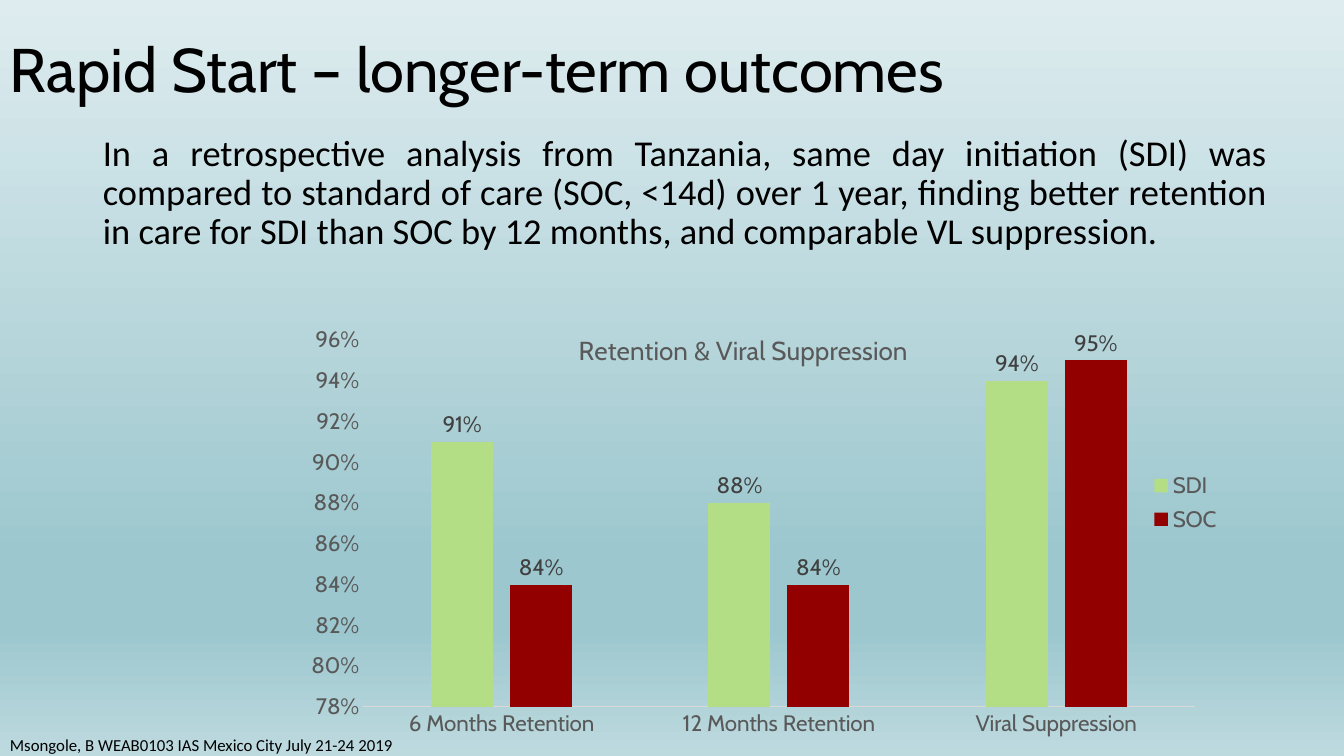
import pptx
import pptx.chart.data
import pptx.dml.color
import pptx.enum.chart
import pptx.enum.text
import pptx.oxml
import pptx.oxml.ns
import pptx.util

SCALE = 914400 / 100.8
SLIDE_W, SLIDE_H = 1344, 756


class Theme:
    heading_font, body_font = "Cabin", "Calibri"
    title, body, chart_title, chart, source = 44, 26, 18.6, 16, 12
    text, chart_text, label, axis = "000000", "595959", "404040", "D9D9D9"
    series = ("B4DE86", "920000")
    background = ((0, "DEECEF"), (74, "9CC7CE"), (83, "9CC7CE"), (100, "BDDADF"))


def px(n):
    return pptx.util.Emu(round(n * SCALE))


def rgb(color):
    return pptx.dml.color.RGBColor.from_string(color)


def set_font(font, size, color, name):
    font.size, font.name, font.bold = pptx.util.Pt(size), name, False
    font.color.rgb = rgb(color)


def add_background(slide):
    fill = slide.background.fill
    fill.gradient()
    fill.gradient_angle = 270
    stops = slide.element.find(".//" + pptx.oxml.ns.qn("a:gsLst"))
    for gs in list(stops):
        stops.remove(gs)
    for position, color in Theme.background:
        stops.append(pptx.oxml.parse_xml(
            f'<a:gs {pptx.oxml.ns.nsdecls("a")} pos="{position * 1000}">'
            f'<a:srgbClr val="{color}"/></a:gs>'))


def add_text(slide, box, text, size, name, wrap=True, line_spacing=None,
             align=pptx.enum.text.PP_ALIGN.LEFT,
             anchor=pptx.enum.text.MSO_ANCHOR.TOP):
    tf = slide.shapes.add_textbox(*map(px, box)).text_frame
    tf.word_wrap, tf.vertical_anchor = wrap, anchor
    p = tf.paragraphs[0]
    p.text = text
    p.alignment, p.line_spacing = align, line_spacing
    set_font(p.runs[0].font, size, Theme.text, name)


def place(chart, tag, box, frame, inner=False):
    """Lay out a chart part at a px box relative to the chart frame."""
    ns = pptx.oxml.ns
    element = chart.element.find(".//" + ns.qn(tag))
    for old in element.findall(ns.qn("c:layout")):
        element.remove(old)
    x, y, w, h = box
    values = {"x": x / frame[2], "y": y / frame[3]}
    if w:
        values.update(w=w / frame[2], h=h / frame[3])
    target = '<c:layoutTarget val="inner"/>' if inner else ""
    modes = '<c:xMode val="edge"/><c:yMode val="edge"/>'
    sizes = "".join(f'<c:{k} val="{v:.4f}"/>' for k, v in values.items())
    layout = pptx.oxml.parse_xml(
        f'<c:layout {ns.nsdecls("c")}><c:manualLayout>{target}{modes}{sizes}'
        '</c:manualLayout></c:layout>')
    overlay = element.find(ns.qn("c:overlay"))
    element.insert(0 if overlay is None else element.index(overlay), layout)


def format_axes(chart):
    none = pptx.enum.chart.XL_TICK_MARK.NONE
    for axis in (chart.category_axis, chart.value_axis):
        axis.major_tick_mark = axis.minor_tick_mark = none
        axis.has_major_gridlines = False
        set_font(axis.tick_labels.font, Theme.chart, Theme.chart_text, Theme.heading_font)
    line = chart.category_axis.format.line
    line.color.rgb, line.width = rgb(Theme.axis), pptx.util.Pt(0.75)

    axis = chart.value_axis
    axis.format.line.fill.background()
    axis.minimum_scale, axis.maximum_scale, axis.major_unit = 0.78, 0.96, 0.02
    axis.tick_labels.number_format = "0%"
    axis.tick_labels.number_format_is_linked = False


def format_series(plot):
    plot.gap_width, plot.overlap, plot.vary_by_categories = 219, -27, False
    for series, color in zip(plot.series, Theme.series):
        series.format.fill.solid()
        series.format.fill.fore_color.rgb = rgb(color)
        labels = series.data_labels
        labels.show_value = True
        labels.number_format, labels.number_format_is_linked = "0%", False
        labels.position = pptx.enum.chart.XL_LABEL_POSITION.OUTSIDE_END
        set_font(labels.font, Theme.chart, Theme.label, Theme.heading_font)


def add_outcome_chart(slide, box):
    data = pptx.chart.data.CategoryChartData(number_format="0%")
    data.categories = ["6 Months Retention", "12 Months Retention", "Viral Suppression"]
    data.add_series("SDI", (0.91, 0.88, 0.94))
    data.add_series("SOC", (0.84, 0.84, 0.95))
    chart = slide.shapes.add_chart(
        pptx.enum.chart.XL_CHART_TYPE.COLUMN_CLUSTERED, *map(px, box), data).chart
    set_font(chart.font, Theme.chart, Theme.text, Theme.heading_font)
    format_axes(chart)
    format_series(chart.plots[0])

    chart.has_title = True
    tf = chart.chart_title.text_frame
    tf.text = "Retention & Viral Suppression"
    set_font(tf.paragraphs[0].runs[0].font,
             Theme.chart_title, Theme.chart_text, Theme.heading_font)

    chart.has_legend = True
    legend = chart.legend
    legend.position = pptx.enum.chart.XL_LEGEND_POSITION.BOTTOM
    legend.include_in_layout = False
    set_font(legend.font, Theme.chart, Theme.chart_text, Theme.heading_font)

    place(chart, "c:plotArea", (100, 26, 832, 367), box, inner=True)
    place(chart, "c:title", (311, 13, 0, 0), box)
    place(chart, "c:legend", (885, 151, 75, 75), box)


def add_outcomes_slide(prs):
    slide = prs.slides.add_slide(prs.slide_layouts[6])
    add_background(slide)
    add_text(slide, (0, 0, 1159, 146), "Rapid Start – longer-term outcomes",
             Theme.title, Theme.heading_font, line_spacing=0.9,
             anchor=pptx.enum.text.MSO_ANCHOR.MIDDLE)
    add_text(slide, (93, 130, 1185, 480),
             "In a retrospective analysis from Tanzania, same day initiation (SDI) was "
             "compared to standard of care (SOC, <14d) over 1 year, finding better "
             "retention in care for SDI than SOC by 12 months, and comparable VL "
             "suppression.",
             Theme.body, Theme.body_font, line_spacing=0.9,
             align=pptx.enum.text.PP_ALIGN.JUSTIFY)
    add_outcome_chart(slide, (263, 314, 988, 465))
    add_text(slide, (0, 730, 409, 30),
             "Msongole, B WEAB0103 IAS Mexico City July 21-24 2019",
             Theme.source, Theme.body_font, wrap=False)


def main():
    prs = pptx.Presentation()
    prs.slide_width, prs.slide_height = px(SLIDE_W), px(SLIDE_H)
    add_outcomes_slide(prs)
    prs.save("out.pptx")


if __name__ == "__main__":
    main()
